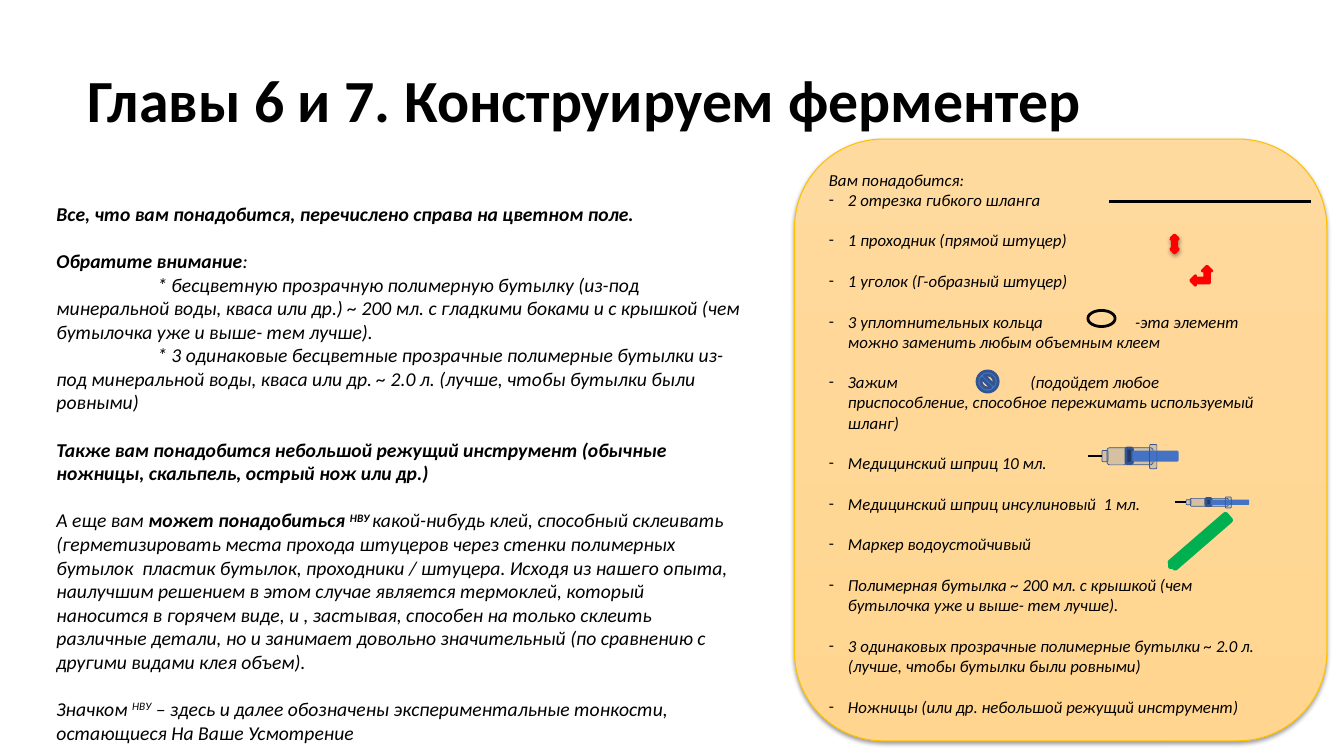
from lxml import etree
from pptx import Presentation
from pptx.dml.color import RGBColor
from pptx.enum.dml import MSO_FILL
from pptx.enum.shapes import MSO_CONNECTOR, MSO_SHAPE as SHAPE
from pptx.enum.text import MSO_ANCHOR, MSO_AUTO_SIZE, PP_ALIGN
from pptx.oxml import parse_xml
from pptx.oxml.ns import nsdecls, qn
from pptx.util import Inches, Pt

BLACK, RED, GREEN = "000000", "FF0000", "00B050"
BLUE, NAVY, EDGE = "4472C4", "203864", "325490"


def write(para, text, size=12, bold=False, italic=True, raised=False):
    span = para.add_run()
    span.text = text
    font = span.font
    font.name, font.size, font.bold, font.italic = "Calibri", Pt(size), bold, italic
    font.color.rgb = RGBColor.from_string(BLACK)
    if raised:
        font._element.set("baseline", "30000")


def draw(shapes, kind, box, fill=None, line=None, width=2, opacity=None, shadow=False):
    shape = shapes.add_shape(kind, *[Inches(v) for v in box])
    shape.shadow.inherit = False
    if fill:
        shape.fill.solid()
        shape.fill.fore_color.rgb = RGBColor.from_string(fill)
    else:
        shape.fill.background()
    if opacity:
        color = shape._element.spPr.find(qn("a:solidFill"))[0]
        etree.SubElement(color, qn("a:alpha"), val=str(opacity * 1000))
    if line:
        shape.line.color.rgb = RGBColor.from_string(line)
        shape.line.width = Pt(width)
    else:
        shape.line.fill.background()
    if shadow:
        shape._element.spPr.find(qn("a:effectLst")).append(parse_xml(
            f'<a:outerShdw {nsdecls("a")} blurRad="39370" dist="20320" dir="5400000" rotWithShape="0">'
            '<a:srgbClr val="000000"><a:alpha val="38000"/></a:srgbClr></a:outerShdw>'))
    return shape


deck = Presentation()
deck.slide_width, deck.slide_height = Inches(13.33), Inches(7.5)
page = deck.slides.add_slide(deck.slide_layouts[3])
shapes = page.shapes
title, notice, supplies = page.placeholders

# Place the three text areas
for area, box in ((title, (0.77, 0.42, 10.21, 1.2)),
                  (notice, (0.46, 1.95, 6.99, 5.46)),
                  (supplies, (8.12, 1.63, 4.44, 5.49))):
    area.left, area.top, area.width, area.height = [Inches(v) for v in box]
    frame = area.text_frame
    frame.word_wrap = True
    frame.auto_size = MSO_AUTO_SIZE.NONE
    frame.vertical_anchor = MSO_ANCHOR.MIDDLE if area is title else MSO_ANCHOR.TOP

# Title
para = title.text_frame.paragraphs[0]
para.alignment = PP_ALIGN.LEFT
para.line_spacing = 0.9
write(para, "Главы 6 и 7. Конструируем ферментер", size=42.7, bold=True, italic=False)

# Coloured card behind the list of supplies
card = draw(shapes, SHAPE.ROUNDED_RECTANGLE, (7.88, 1.38, 5.28, 5.97),
            line="FFC000", width=0.75, shadow=True)
card.fill.gradient()
card.fill.gradient_angle = 270
for stop, position, color in zip(card.fill.gradient_stops, (0, 1), ("FFDA9E", "FFD590")):
    stop.position = position
    stop.color.rgb = RGBColor.from_string(color)
shapes._spTree.insert(2, card._element)

# Notes on the left: space before, first-line indent, spans
strong, raised = {"bold": True}, {"raised": True}
notes = [
    (0, 0, [("Все, что вам понадобится, перечислено справа на цветном поле.", strong)]),
    (17, 0, [("Обратите внимание", strong), (":", {})]),
    (0, 1, [("* бесцветную прозрачную полимерную бутылку (из-под минеральной воды, кваса или др.) "
             "~ 200 мл. с гладкими боками и с крышкой (чем бутылочка уже и выше- тем лучше).", {})]),
    (0, 1, [("* 3 одинаковые бесцветные прозрачные полимерные бутылки из-под минеральной воды, "
             "кваса или др. ~ 2.0 л. (лучше, чтобы бутылки были ровными)", {})]),
    (17, 0, [("Также вам понадобится небольшой режущий инструмент (обычные ножницы, скальпель, "
              "острый нож или др.)", strong)]),
    (17, 0, [("А еще вам ", {}), ("может понадобиться ", strong), ("НВУ ", strong | raised),
             ("какой-нибудь клей, способный склеивать (герметизировать места прохода штуцеров "
              "через стенки полимерных бутылок  пластик бутылок, проходники / штуцера. Исходя из "
              "нашего опыта, наилучшим решением в этом случае является термоклей, который "
              "наносится в горячем виде, и , застывая, способен на только склеить различные "
              "детали, но и занимает довольно значительный (по сравнению с другими видами клея "
              "объем).", {})]),
    (17, 0, [("Значком ", {}), ("НВУ", raised),
             (" – здесь и далее обозначены экспериментальные тонкости, остающиеся На Ваше "
              "Усмотрение", {})]),
]
for number, (gap, indent, spans) in enumerate(notes):
    frame = notice.text_frame
    para = frame.add_paragraph() if number else frame.paragraphs[0]
    para.space_before = Pt(gap)
    props = para._p.get_or_add_pPr()
    props.set("marL", "0")
    props.set("indent", str(Inches(indent)))
    etree.SubElement(props, qn("a:buNone"))
    for text, style in spans:
        write(para, text, size=14, **style)

# List of supplies: text and tab stop
items = [
    ("2 отрезка гибкого шланга", 0),
    ("1 проходник (прямой штуцер)", 0),
    ("1 уголок (Г-образный штуцер)", 0),
    ("3 уплотнительных кольца\t -эта элемент можно заменить любым объемным клеем", 3),
    ("Зажим\t(подойдет любое приспособление, способное пережимать используемый шланг)", 2),
    ("Медицинский шприц 10 мл.", 0),
    ("Медицинский шприц инсулиновый  1 мл.", 0),
    ("Маркер водоустойчивый", 0),
    ("Полимерная бутылка ~ 200 мл. с крышкой (чем бутылочка уже и выше- тем лучше).", 0),
    ("3 одинаковых прозрачные полимерные бутылки ~ 2.0 л. (лучше, чтобы бутылки были ровными)", 0),
    ("Ножницы (или др. небольшой режущий инструмент)", 0),
]
para = supplies.text_frame.paragraphs[0]
para.space_before = Pt(0)
props = para._p.get_or_add_pPr()
props.set("marL", "0")
props.set("indent", "0")
etree.SubElement(props, qn("a:buNone"))
write(para, "Вам понадобится:")
for number, (text, tab) in enumerate(items):
    para = supplies.text_frame.add_paragraph()
    para.space_before = Pt(14.6 if number else 0)
    props = para._p.get_or_add_pPr()
    props.set("marL", str(Inches(0.19)))
    props.set("indent", str(Inches(-0.19)))
    color = etree.SubElement(props, qn("a:buClr"))
    etree.SubElement(color, qn("a:srgbClr"), val=BLACK)
    etree.SubElement(props, qn("a:buFont"), typeface="Calibri")
    etree.SubElement(props, qn("a:buChar"), char="-")
    if tab:
        stops = etree.SubElement(props, qn("a:tabLst"))
        etree.SubElement(stops, qn("a:tab"), pos=str(Inches(tab)), algn="l")
    write(para, text)

# Two pieces of hose
hoses = [
    [(11.41, 1.78), (11.43, 1.8), (11.45, 1.84), (11.56, 1.83), (11.73, 1.8), (12.14, 1.69),
     (12.28, 1.67), (12.38, 1.65), (12.43, 1.66), (12.51, 1.66), (12.55, 1.69), (12.6, 1.71),
     (12.62, 1.81)],
    [(11.27, 2.09), (11.97, 2.19), (12.21, 2.2), (12.37, 2.21), (12.46, 2.19), (12.58, 2.18),
     (12.65, 2.13), (12.69, 2.12), (12.72, 2.08), (12.74, 1.92)],
]
for start, *bends in hoses:
    builder = shapes.build_freeform(*start, scale=Inches(1))
    builder.add_line_segments(bends, close=False)
    hose = builder.convert_to_shape()
    hose.shadow.inherit = False
    hose.fill.background()
    hose.line.color.rgb = RGBColor.from_string(BLACK)
    hose.line.width = Pt(2.25)

# Straight and angled fittings, sealing ring, clamp
straight = draw(shapes, SHAPE.LEFT_RIGHT_ARROW, (11.57, 2.39, 0.16, 0.06), RED, RED, 3, shadow=True)
straight.rotation = 270
draw(shapes, SHAPE.OVAL, (10.79, 3.08, 0.27, 0.16), line=BLACK)
draw(shapes, SHAPE.LEFT_UP_ARROW, (11.81, 2.64, 0.21, 0.19), RED, RED)
draw(shapes, SHAPE.NO_SYMBOL, (9.69, 3.68, 0.21, 0.21), BLUE, EDGE)

# Syringes: parts as shares of the whole, hub last so the needle joins it
glass = {"fill": BLUE, "line": EDGE, "width": 0.5, "opacity": 22}
parts = [
    ((0.21, 0.13, 0.51, 0.71), glass),
    ((0.42, 0.15, 0.07, 0.63), {"fill": NAVY, "line": EDGE}),
    ((0.49, 0.25, 0.51, 0.46), {"fill": BLUE}),
    ((0.68, 0, 0.08, 1), glass),
    ((0.155, 0.25, 0.065, 0.46), glass),
]
for left, top, width, height in ((10.79, 4.41, 0.9, 0.24), (11.65, 4.93, 0.74, 0.11)):
    syringe = shapes.add_group_shape().shapes
    for (x, y, w, h), style in parts:
        box = (left + x * width, top + y * height, w * width, h * height)
        hub = draw(syringe, SHAPE.ROUNDED_RECTANGLE, box, **style)
    middle = hub.top + hub.height // 2
    needle = syringe.add_connector(MSO_CONNECTOR.STRAIGHT, Inches(left), middle, hub.left, middle)
    needle.end_connect(hub, 1)
    needle.line.color.rgb = RGBColor.from_string(BLACK)
    needle.line.width = Pt(1.25)
    etree.SubElement(needle._element.spPr, qn("a:effectLst"))

# Marker
marker = shapes.add_group_shape().shapes
body = draw(marker, SHAPE.ROUNDED_RECTANGLE, (11.53, 5.32, 0.75, 0.1), GREEN, GREEN)
body.rotation = 319.1
draw(marker, SHAPE.ROUNDED_RECTANGLE, (11.6, 5.58, 0.07, 0.05), GREEN, GREEN)

deck.save("out.pptx")
